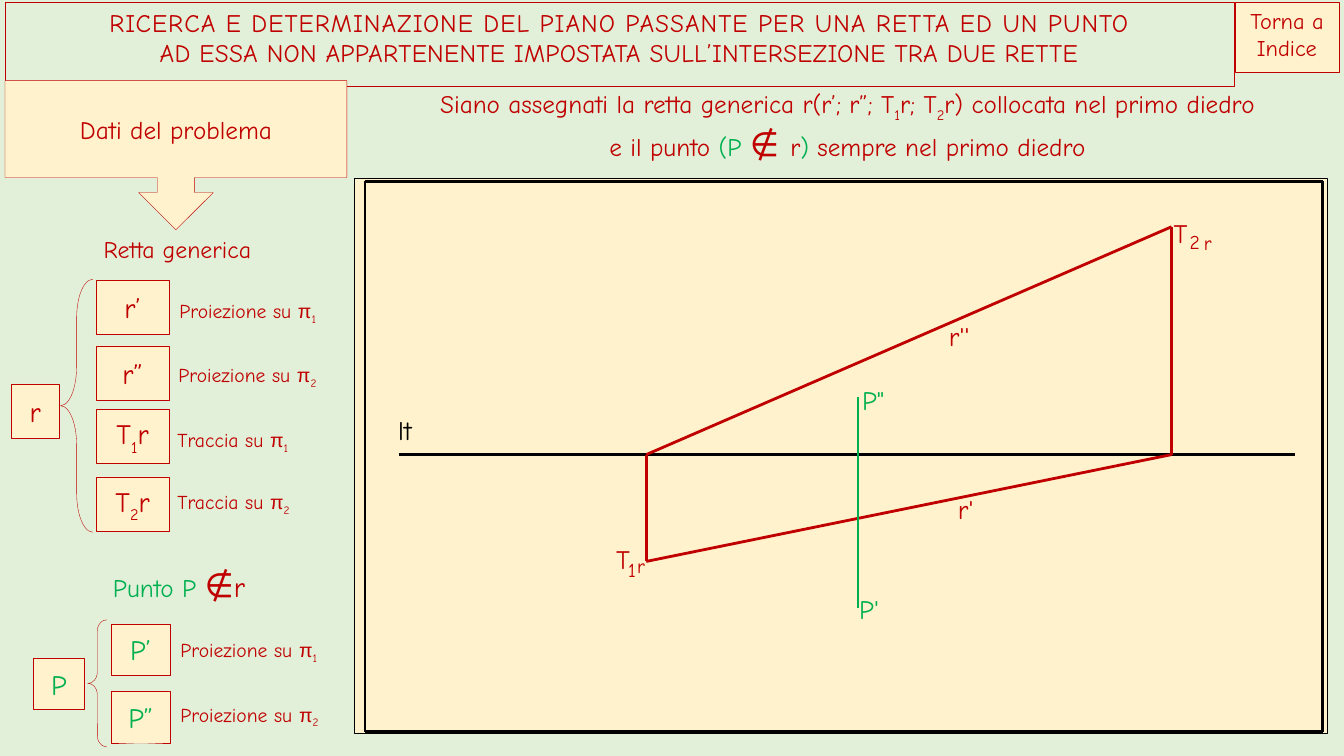
from dataclasses import dataclass

from pptx import Presentation
from pptx.dml.color import RGBColor
from pptx.enum.shapes import MSO_CONNECTOR, MSO_SHAPE
from pptx.enum.text import MSO_ANCHOR, MSO_AUTO_SIZE, PP_ALIGN
from pptx.oxml.ns import qn
from pptx.util import Inches, Pt
from lxml import etree

RECT, BRACE = MSO_SHAPE.RECTANGLE, MSO_SHAPE.LEFT_BRACE
CALLOUT = MSO_SHAPE.DOWN_ARROW_CALLOUT
STRAIGHT = MSO_CONNECTOR.STRAIGHT
TOP, MIDDLE = MSO_ANCHOR.TOP, MSO_ANCHOR.MIDDLE
LEFT, CENTER = PP_ALIGN.LEFT, PP_ALIGN.CENTER
GROW = MSO_AUTO_SIZE.SHAPE_TO_FIT_TEXT


@dataclass(frozen=True)
class Theme:
    background = RGBColor(0xE2, 0xF0, 0xD9)
    cream = RGBColor(0xFF, 0xF2, 0xCC)
    red = RGBColor(0xC0, 0x00, 0x00)
    green = RGBColor(0x00, 0xB0, 0x50)
    black = RGBColor(0, 0, 0)
    font = "Comic Neue"
    greek_font = "Arial"
    body, heading, button, note = 18, 17, 16, 14
    key, symbol, label, index = 20, 24, 19, 14
    border, frame, hairline = 0.25, 0.75, 0


THEME = Theme()


@dataclass(frozen=True)
class Span:
    text: str
    size: float = THEME.body
    color: RGBColor = THEME.red
    font: str = THEME.font
    baseline: int = 0
    spacing: int = 0


def write(shape, paragraphs, align=CENTER, anchor=TOP, grow=True):
    frame = shape.text_frame
    frame.word_wrap = True
    frame.vertical_anchor = anchor
    frame.auto_size = GROW if grow else MSO_AUTO_SIZE.NONE
    for number, spans in enumerate(paragraphs):
        paragraph = frame.add_paragraph() if number else frame.paragraphs[0]
        paragraph.alignment = align
        for span in spans:
            run = paragraph.add_run()
            run.text = span.text
            run.font.name = span.font
            run.font.size = Pt(span.size)
            run.font.color.rgb = span.color
            properties = run._r.get_or_add_rPr()
            if span.baseline:
                properties.set("baseline", str(span.baseline * 1000))
            if span.spacing:
                properties.set("spc", str(span.spacing))


def add_panel(shapes, box, kind=RECT, fill=THEME.cream, line=THEME.red, width=THEME.border):
    panel = shapes.add_shape(kind, *map(Inches, box))
    panel.shadow.inherit = False
    if fill is None:
        panel.fill.background()
    else:
        panel.fill.solid()
        panel.fill.fore_color.rgb = fill
    if line is None:
        panel.line.fill.background()
    else:
        panel.line.color.rgb = line
        panel.line.width = Pt(width)
    return panel


def add_text(shapes, box, paragraphs, align=CENTER):
    write(shapes.add_textbox(*map(Inches, box)), paragraphs, align)


def add_key(shapes, box, spans):
    write(add_panel(shapes, box), [spans], anchor=MIDDLE, grow=False)


def add_brace(shapes, box, curve):
    brace = add_panel(shapes, box, BRACE, fill=None)
    brace.adjustments[0] = curve


def add_note(shapes, left, top, text, plane):
    """Caption naming the projection plane π with its index."""
    size = THEME.note
    spans = [Span(text + " su ", size), Span("π", size, font=THEME.greek_font),
             Span(plane, size, baseline=-25)]
    add_text(shapes, (left, top, 1.75, 0.34), [spans], LEFT)


def add_label(shapes, box, text, color=THEME.red, size=THEME.label):
    label = add_panel(shapes, box, line=None)
    write(label, [[Span(text, size, color)]], LEFT)
    frame = label.text_frame
    frame.word_wrap = False
    frame.margin_left = frame.margin_right = frame.margin_top = frame.margin_bottom = 0


def add_line(shapes, start, end, color):
    line = shapes.add_connector(STRAIGHT, *map(Inches, start + end))
    line.line.color.rgb = color
    line.line.width = Pt(THEME.hairline)
    etree.SubElement(line._element.spPr, qn("a:effectLst"))


def add_header(slide):
    title = slide.shapes.title
    title.left, title.top, title.width, title.height = map(Inches, (0.05, 0.02, 12.19, 0.71))
    title.line.color.rgb = THEME.red
    title.line.width = Pt(THEME.border)
    write(title, [
        [Span("RICERCA E DETERMINAZIONE DEL PIANO PASSANTE PER UNA RETTA ED UN PUNTO", spacing=75)],
        [Span("AD ESSA NON APPARTENENTE IMPOSTATA SULL’INTERSEZIONE TRA DUE RETTE", spacing=20)],
    ])
    button = add_panel(slide.shapes, (12.25, 0.02, 1.03, 0.7))
    write(button, [[Span("Torna a Indice", THEME.button)]])


def add_statement(shapes):
    green = THEME.green
    add_text(shapes, (3.64, 0.83, 9.53, 0.81), [
        [Span("Siano assegnati la retta generica r(r’; r”; T"), Span("1", baseline=-25),
         Span("r; T"), Span("2", baseline=-25), Span("r) collocata nel primo diedro")],
        [Span("e il punto "), Span("(P ", color=green), Span("∉ ", THEME.symbol),
         Span("r"), Span(") ", color=green), Span("sempre nel primo diedro")],
    ])


def add_line_data(shapes):
    size = THEME.key
    add_text(shapes, (0.05, 2.28, 3.42, 0.39), [[Span("Retta generica", THEME.heading)]])
    add_key(shapes, (0.11, 3.81, 0.48, 0.54), [Span("r", size)])
    add_brace(shapes, (0.6, 2.77, 0.32, 2.51), 1.21)

    def trace(plane):
        return [Span("T", size), Span(plane, size, baseline=-30), Span("r", size)]

    rows = [
        (2.78, [Span("r’", size)], 1.68, 2.92, "Proiezione", "1"),
        (3.43, [Span("r”", size)], 1.67, 3.55, "Proiezione", "2"),
        (4.06, trace("1"), 1.66, 4.2, "Traccia", "1"),
        (4.73, trace("2"), 1.66, 4.81, "Traccia", "2"),
    ]
    for key_top, spans, note_left, note_top, text, plane in rows:
        add_key(shapes, (0.95, key_top, 0.73, 0.54), spans)
        add_note(shapes, note_left, note_top, text, plane)


def add_point_data(shapes):
    green, size = THEME.green, THEME.key
    add_text(shapes, (0.05, 5.55, 3.45, 0.5), [
        [Span("Punto P ", color=green), Span("∉", THEME.symbol), Span("r", size)]])
    add_key(shapes, (0.33, 6.53, 0.51, 0.51), [Span("P", size, green)])
    add_brace(shapes, (0.87, 6.15, 0.19, 1.26), 0.58)
    for key_top, note_top, name, plane in ((6.19, 6.28, "P’", "1"), (6.86, 6.92, "P”", "2")):
        add_key(shapes, (1.1, key_top, 0.59, 0.51), [Span(name, size, green)])
        add_note(shapes, 1.69, note_top, "Proiezione", plane)


def add_drawing(shapes):
    """Two-plane projection of line r and point P about the ground line lt."""
    black, red, green = THEME.black, THEME.red, THEME.green
    add_panel(shapes, (3.52, 1.77, 9.65, 5.51), line=black, width=THEME.frame)
    add_label(shapes, (3.95, 4.11, 0.33, 0.53), "lt", black)
    add_label(shapes, (8.52, 5.88, 0.24, 0.32), "P'", green)
    add_label(shapes, (8.55, 3.81, 0.25, 0.32), 'P"', green)
    add_label(shapes, (11.64, 2.15, 0.18, 0.3), "T")
    add_label(shapes, (11.8, 2.28, 0.12, 0.22), "2", size=THEME.index)
    add_label(shapes, (11.94, 2.29, 0.09, 0.22), "r", size=THEME.index)
    add_label(shapes, (6.11, 5.39, 0.18, 0.3), "T")
    add_label(shapes, (6.23, 5.53, 0.09, 0.22), "1", size=THEME.index)
    add_label(shapes, (6.32, 5.49, 0.09, 0.22), "r", size=THEME.index)
    add_label(shapes, (9.5, 4.89, 0.23, 0.3), "r'")
    add_label(shapes, (9.41, 3.17, 0.32, 0.26), "r''")

    corners = [(3.62, 7.26), (13.12, 7.26), (13.12, 1.8), (3.62, 1.8)]
    for start, end in zip(corners, corners[1:] + corners[:1]):
        add_line(shapes, start, end, black)

    ground = 4.51
    trace_1, trace_2 = (6.41, 5.57), (11.62, 2.25)
    foot_1, foot_2 = (trace_1[0], ground), (trace_2[0], ground)
    add_line(shapes, (3.96, ground), (12.84, ground), black)
    for start, end in ((foot_1, trace_1), (trace_2, foot_2), (foot_1, trace_2), (foot_2, trace_1)):
        add_line(shapes, start, end, red)
    add_line(shapes, (8.51, 3.94), (8.51, 6.03), green)


def main():
    deck = Presentation()
    deck.slide_width, deck.slide_height = Inches(13.33), Inches(7.5)
    slide = deck.slides.add_slide(deck.slide_layouts.get_by_name("Title Only"))
    slide.background.fill.solid()
    slide.background.fill.fore_color.rgb = THEME.background
    shapes = slide.shapes

    callout = add_panel(shapes, (0.05, 0.8, 3.39, 1.48), CALLOUT)
    write(callout, [[Span("Dati del problema")]], anchor=MIDDLE, grow=False)
    add_header(slide)
    add_drawing(shapes.add_group_shape().shapes)
    add_statement(shapes)
    add_line_data(shapes)
    add_point_data(shapes)
    deck.save("out.pptx")


if __name__ == "__main__":
    main()
